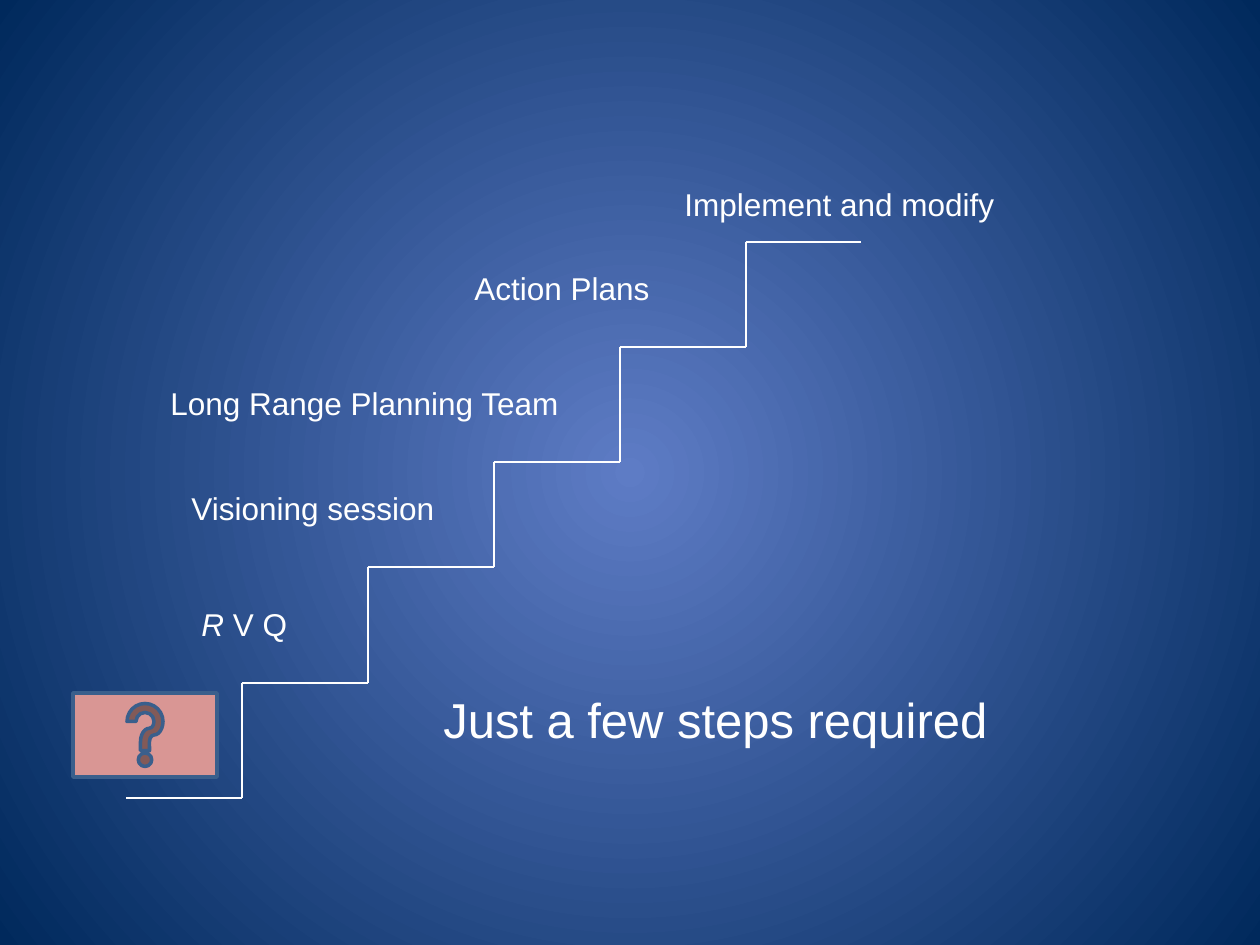
from itertools import pairwise

from lxml import etree
from pptx import Presentation
from pptx import util as u
from pptx.dml.color import RGBColor
from pptx.enum import shapes, text
from pptx.oxml import parse_xml
from pptx.oxml.ns import nsdecls, qn

WHITE = RGBColor(0xFF, 0xFF, 0xFF)
CENTER_BLUE = RGBColor(0x5E, 0x7C, 0xC5)
EDGE_BLUE = RGBColor(0x00, 0x29, 0x5C)
PINK = RGBColor(0xD9, 0x96, 0x94)
BUTTON_LINE = RGBColor(0x3A, 0x5F, 0x8C)


def px(*lengths):
    return [u.Emu(round(length * 914400 / 126)) for length in lengths]


def add_label(page, spans, left, top, width, height, size):
    box = page.shapes.add_textbox(*px(left, top, width, height))
    frame = box.text_frame
    frame.word_wrap = False
    frame.auto_size = text.MSO_AUTO_SIZE.SHAPE_TO_FIT_TEXT
    para = frame.paragraphs[0]
    para.font.name = "Arial"
    para.font.size = u.Pt(size)
    para.font.color.rgb = WHITE
    for words, italic in spans:
        span = para.add_run()
        span.text = words
        if italic:
            span.font.italic = True


deck = Presentation()
deck.slide_width, deck.slide_height = px(1260, 945)
page = deck.slides.add_slide(deck.slide_layouts[6])

backdrop = page.background.fill
backdrop.gradient()
for stop, color, position in zip(backdrop.gradient_stops, (CENTER_BLUE, EDGE_BLUE), (0, 1)):
    stop.color.rgb = color
    stop.position = position
gradient = page.background._cSld.find(".//" + qn("a:gradFill"))
gradient.replace(
    gradient.find(qn("a:lin")),
    parse_xml(
        f'<a:path {nsdecls("a")} path="circle">'
        '<a:fillToRect l="50000" t="50000" r="50000" b="50000"/></a:path>'
    ),
)

button = page.shapes.add_shape(
    shapes.MSO_SHAPE.ACTION_BUTTON_HELP, *px(73, 693, 144, 84)
)
button.shadow.inherit = False
button.fill.solid()
button.fill.fore_color.rgb = PINK
button.line.color.rgb = BUTTON_LINE
button.line.width = u.Pt(2)

labels = [
    ([("R", True), (" V Q", False)], 189, 599, 112),
    ([("Visioning session", False)], 179, 483, 271),
    ([("Long Range Planning Team", False)], 158, 378, 417),
    ([("Action Plans", False)], 462, 263, 202),
    ([("Implement and modify", False)], 672, 179, 338),
]
for spans, left, top, width in labels:
    add_label(page, spans, left, top, width, 51, 18)

treads = [798, 683, 567, 462, 347, 242]
risers = [126, *range(242, 747, 126), 861]
corners = []
for tread, (start, end) in zip(treads, pairwise(risers)):
    corners += [(start, tread), (end, tread)]
for start, end in pairwise(corners):
    step = page.shapes.add_connector(shapes.MSO_CONNECTOR.STRAIGHT, *px(*start, *end))
    step.line.color.rgb = WHITE
    step.line.width = u.Pt(0.75)
    etree.SubElement(step._element.spPr, qn("a:effectLst"))

add_label(page, [("Just a few steps required", False)], 431, 683, 576, 72, 28)

deck.save("out.pptx")
